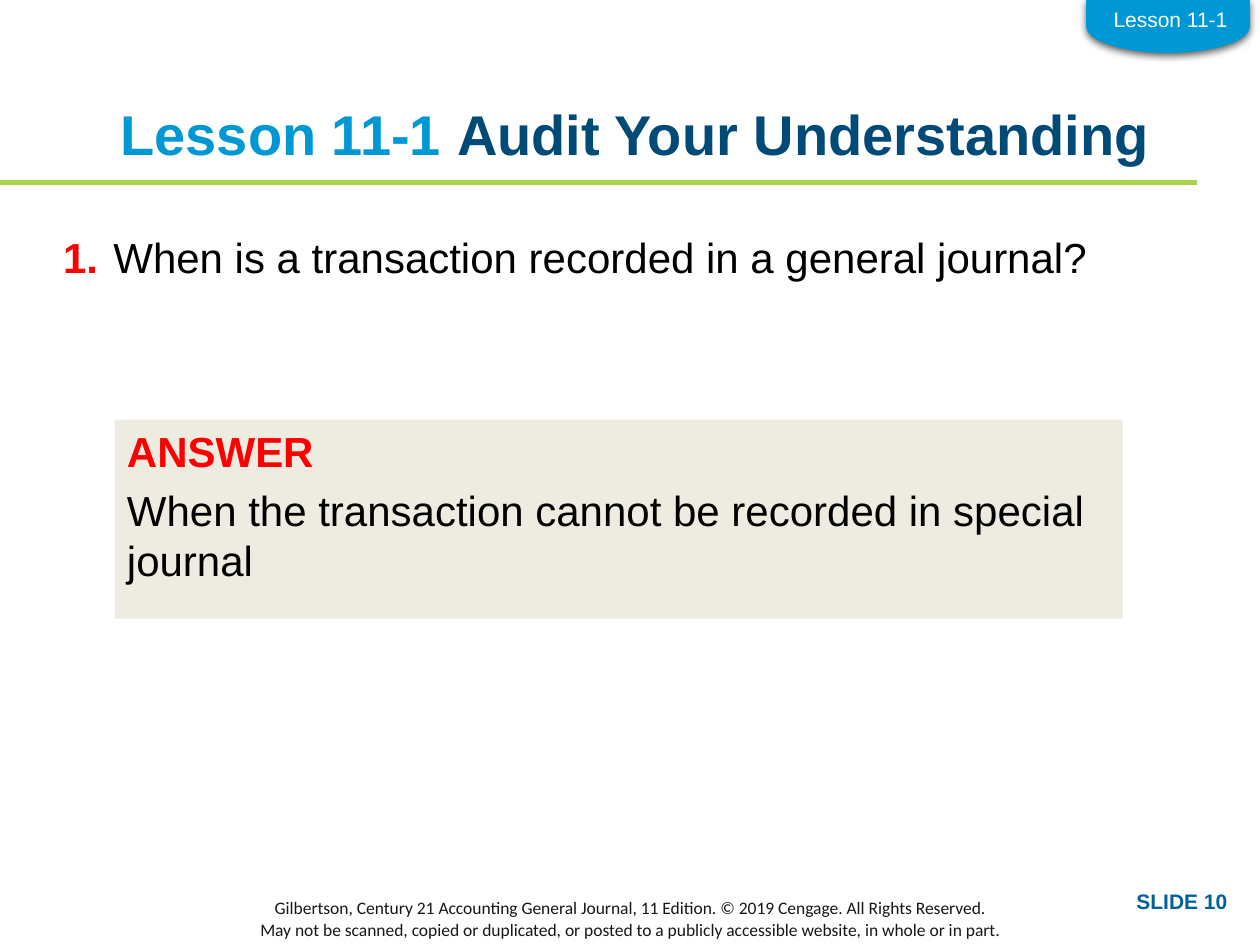
from lxml.etree import SubElement
from pptx import Presentation
from pptx.dml.color import RGBColor
from pptx.enum.shapes import MSO_CONNECTOR, MSO_SHAPE as Shape
from pptx.enum.text import MSO_ANCHOR as Anchor, PP_ALIGN as Align
from pptx.oxml.ns import qn
from pptx.util import Inches, Pt

COLORS = {"sky": "0098D4", "navy": "004A78", "blue": "006198", "lime": "AAD24B",
          "sand": "EEECE1", "red": "FF0000", "black": "000000", "ink": "181717",
          "white": "FFFFFF"}
WIDTH, HEIGHT = 10, 7.5


def color(name):
    return RGBColor.from_string(COLORS[name])


class LessonSlide:
    """Draw lesson elements on a blank page, with places given as shares of its size."""

    def __init__(self, deck):
        self.width, self.height = deck.slide_width, deck.slide_height
        self.page = deck.slides.add_slide(deck.slide_layouts[6])
        self.shapes = self.page.shapes

    def place(self, left, top, width, height):
        return (round(left * self.width), round(top * self.height),
                round(width * self.width), round(height * self.height))

    def fill_text(self, box, lines, size, font="Arial", align=Align.LEFT, before=0, after=0,
                  margin=None, anchor=Anchor.TOP, wrap=True, hang=0):
        frame = box.text_frame
        frame.word_wrap, frame.vertical_anchor = wrap, anchor
        if margin is not None:
            frame.margin_left = frame.margin_right = margin
            frame.margin_top = frame.margin_bottom = margin
        for index, line in enumerate(lines):
            para = frame.paragraphs[0] if index == 0 else frame.add_paragraph()
            para.alignment, para.space_after = align, Pt(after)
            para.space_before = Pt(before if index else 0)
            if hang:
                indent = Inches(hang)
                para._p.get_or_add_pPr().set("marL", str(indent))
                para._p.get_or_add_pPr().set("indent", str(-indent))
            for words, shade, bold in line:
                span = para.add_run()
                span.text = words
                span.font.name, span.font.size, span.font.bold = font, Pt(size), bold
                span.font.color.rgb = color(shade)

    def text(self, place, lines, size, **style):
        self.fill_text(self.shapes.add_textbox(*self.place(*place)), lines, size, **style)

    def block(self, kind, place, fill, rotation=0):
        block = self.shapes.add_shape(kind, *self.place(*place))
        block.shadow.inherit = False
        block.fill.solid()
        block.fill.fore_color.rgb = color(fill)
        block.line.fill.background()
        block.rotation = rotation
        return block

    def panel(self, place, fill, lines, size, **style):
        self.fill_text(self.block(Shape.RECTANGLE, place, fill), lines, size, **style)

    def tab(self, place, fill):
        tab = self.block(Shape.FLOWCHART_DELAY, place, fill, rotation=90)
        effects = tab._element.spPr.find(qn("a:effectLst"))
        shadow = SubElement(effects, qn("a:outerShdw"), blurRad=str(Pt(4.5)),
                            dist=str(Pt(1.5)), dir="5400000", rotWithShape="0")
        shade = SubElement(shadow, qn("a:srgbClr"), val=COLORS["black"])
        SubElement(shade, qn("a:alpha"), val="63000")

    def rule(self, top, width, shade, weight):
        left, level, span, _ = self.place(0, top, width, 0)
        rule = self.shapes.add_connector(MSO_CONNECTOR.STRAIGHT, left, level, span, level)
        rule.line.color.rgb = color(shade)
        rule.line.width = Pt(weight)
        SubElement(rule._element.spPr, qn("a:effectLst"))


def share(left, top, width, height):
    return left / WIDTH, top / HEIGHT, width / WIDTH, height / HEIGHT


def main():
    deck = Presentation()
    deck.slide_width, deck.slide_height = Inches(WIDTH), Inches(HEIGHT)
    slide = LessonSlide(deck)
    slide.rule(1.45 / HEIGHT, 0.95, "lime", 3)
    slide.text(share(0, 7.14, 10, 0.3), [
        [("Gilbertson, Century 21 Accounting General Journal, 11 Edition. "
          "© 2019 Cengage. All Rights Reserved.", "ink", False)],
        [("May not be scanned, copied or duplicated, or posted to a publicly "
          "accessible website, in whole or in part.", "ink", False)],
    ], 10, font="Calibri", align=Align.CENTER, anchor=Anchor.MIDDLE)
    slide.text(share(0.5, 0.79, 9.08, 0.74), [
        [("Lesson 11-1 ", "sky", True), ("Audit Your Understanding", "navy", True)],
    ], 32, align=Align.CENTER, after=6, margin=0)
    slide.text(share(0.5, 1.84, 8.79, 0.84), [
        [("1.", "red", True),
         ("\tWhen is a transaction recorded in a general journal?", "black", False)],
    ], 24, after=6, margin=0, hang=0.4)
    slide.panel(share(0.91, 3.33, 8, 1.58), "sand", [
        [("ANSWER", "red", True)],
        [("When the transaction cannot be recorded in special journal", "black", False)],
    ], 24, before=4.8)
    slide.text(share(7.84, 7, 2, 0.3), [[("SLIDE 10", "blue", True)]], 12, align=Align.RIGHT)
    slide.tab(share(9.06, -0.44, 0.42, 1.3), "sky")
    slide.text(share(8.73, 0, 1.12, 0.3), [[("Lesson 11-1", "white", False)]], 12,
               align=Align.CENTER, wrap=False)
    deck.save("out.pptx")


if __name__ == "__main__":
    main()
